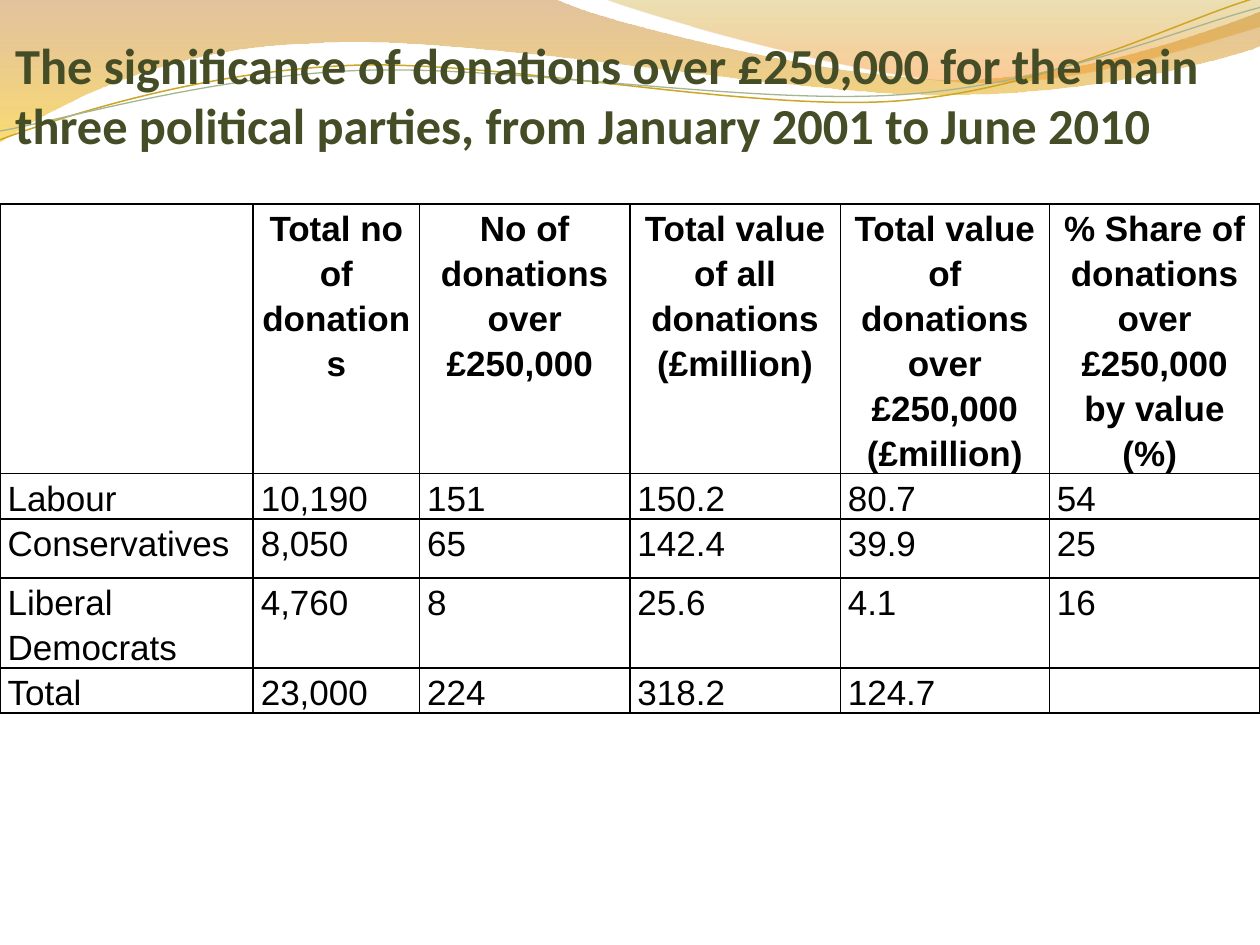
from math import cos, radians, sin

from pptx import Presentation
from pptx.dml.color import RGBColor
from pptx.enum import text
from pptx.oxml import parse_xml
from pptx.oxml.ns import nsdecls, qn
from pptx.util import Inches, Pt

TITLE = ("The significance of donations over £250,000 for the main "
         "three political parties, from January 2001 to June 2010")
ROWS = [
    ["", "Total no of donations", "No of donations over £250,000 ",
     "Total value of all donations (£million)",
     "Total value of donations over £250,000 (£million)",
     "% Share of donations over £250,000 by value (%) "],
    ["Labour", "10,190", "151", "150.2", "80.7", "54"],
    ["Conservatives", "8,050", "65", "142.4", "39.9", "25"],
    ["Liberal Democrats", "4,760", "8", "25.6", "4.1", "16"],
    ["Total", "23,000", "224", "318.2", "124.7", ""],
]
WIDTHS = [2.01, 1.32, 1.67, 1.67, 1.66, 1.67]
HEIGHTS = [1.49, 0.36, 0.47, 0.71, 0.36]

# Outlines in inches: one point is a straight step, three a Bezier curve.
BANDS = [
    ([[(0, 0)], [(4.4, -0.01)],
      [(4.76, 0.17), (6.64, 0.63), (7.58, 0.63)],
      [(8.53, 0.63), (9.58, 0.26), (10, 0.09)], [(10.01, 0.36)],
      [(9.83, 0.44), (8.7, 0.76), (7.46, 0.75)],
      [(6.22, 0.75), (3.82, 0.28), (2.57, 0.34)],
      [(1.29, 0.36), (0.46, 0.83), (-0.01, 1.13)], [(0, 0)]],
     [(0, "C07A28", 45), (1, "F7BF00", 55)]),
    ([[(4.79, -0.01)],
      [(5.09, 0.11), (6.82, 0.62), (7.69, 0.65)],
      [(8.56, 0.69), (9.61, 0.32), (10, 0.21)], [(10, 0)], [(4.79, -0.01)]],
     [(0, "C09709", 30), (0.8, "F59320", 45)]),
]
TILT = -2.7
WAVES = [
    ([[(0, 1.11)],
      [(0.48, 0.93), (1.58, 0.57), (2.77, 0.52)],
      [(3.95, 0.47), (5.93, 0.89), (7.13, 0.8)],
      [(8.33, 0.71), (9.38, 0.15), (9.98, -0.02)]],
     (4.99, 0.575), "CCA624", 0.85),
    ([[(0, 1.04)],
      [(0.47, 0.96), (1.64, 0.61), (2.83, 0.56)],
      [(4.03, 0.51), (5.97, 0.84), (7.17, 0.75)],
      [(8.36, 0.67), (9.41, 0.21), (10, 0.06)]],
     (4.995, 0.59), "A5B592", 0.75),
]


def rgb(code):
    return RGBColor.from_string(code)


def turn(point, mid, angle):
    x, y = point[0] - mid[0], point[1] - mid[1]
    c, s = cos(radians(angle)), sin(radians(angle))
    return mid[0] + c * x - s * y, mid[1] + s * x + c * y


def outline(slide, steps, close):
    """Build a freeform, joining each three-point step into a true curve."""
    points = [(x * 1000, y * 1000) for step in steps for x, y in step]
    pen = slide.shapes.build_freeform(*points[0], scale=Inches(1) / 1000)
    pen.add_line_segments(points[1:], close=close)
    shape = pen.convert_to_shape()
    shape.shadow.inherit = False
    nodes = iter(list(shape._element.iter(qn("a:lnTo"))))
    for step in steps[1:]:
        lines = [next(nodes) for _ in step]
        if len(step) == 3:
            curve = parse_xml(f'<a:cubicBezTo {nsdecls("a")}/>')
            lines[0].addprevious(curve)
            for line in lines:
                curve.append(line[0])
                line.getparent().remove(line)
    return shape


def add_band(slide, steps, stops):
    shape = outline(slide, steps, True)
    shape.line.fill.background()
    shape.fill.gradient()
    shape.fill.gradient_angle = 270
    for stop, (place, code, _) in zip(shape.fill.gradient_stops, stops):
        stop.position = place
        stop.color.rgb = rgb(code)
    for node, (_, _, alpha) in zip(shape._element.iter(qn("a:srgbClr")), stops):
        node.append(parse_xml(f'<a:alpha {nsdecls("a")} val="{alpha * 1000}"/>'))


def add_wave(slide, steps, mid, code, width):
    level = [[turn(point, mid, -TILT) for point in step] for step in steps]
    shape = outline(slide, level, False)
    shape.rotation = TILT
    shape.fill.background()
    shape.line.color.rgb = rgb(code)
    shape.line.width = Pt(width)


def style(para, font, size, code, bold):
    for run in para.runs:
        run.font.name, run.font.size, run.font.bold = font, Pt(size), bold
        run.font.color.rgb = rgb(code)


def set_title(slide):
    title = slide.shapes.title
    title.left, title.top = Inches(0.12), Inches(0)
    title.width, title.height = Inches(9.88), Inches(1.23)
    frame = title.text_frame
    frame.text = TITLE
    frame.word_wrap = True
    frame.auto_size = text.MSO_AUTO_SIZE.NONE
    frame.vertical_anchor = text.MSO_ANCHOR.BOTTOM
    frame.margin_left = frame.margin_right = frame.margin_bottom = 0
    para = frame.paragraphs[0]
    para.alignment = text.PP_ALIGN.LEFT
    style(para, "Calibri", 28.8, "444D26", True)
    slide.shapes._spTree.append(title._element)  # bring in front of the waves


def set_cell(cell, words, head):
    cell.text = words
    cell.margin_left = cell.margin_right = Inches(0.06)
    cell.margin_top = cell.margin_bottom = 0
    para = cell.text_frame.paragraphs[0]
    para.line_spacing = 1.15
    para.alignment = text.PP_ALIGN.CENTER if head else text.PP_ALIGN.LEFT
    style(para, "Arial", 20, "000000", head)
    props = cell._tc.get_or_add_tcPr()
    for side in "LRTB":
        props.append(parse_xml(
            f'<a:ln{side} {nsdecls("a")} w="{Pt(1)}"><a:solidFill>'
            f'<a:srgbClr val="000000"/></a:solidFill></a:ln{side}>'))
    cell.fill.background()


def add_grid(slide):
    table = slide.shapes.add_table(
        len(ROWS), len(WIDTHS), Inches(0), Inches(1.62),
        Inches(sum(WIDTHS)), Inches(sum(HEIGHTS))).table
    table.first_row = table.horz_banding = False
    for col, width in zip(table.columns, WIDTHS):
        col.width = Inches(width)
    for r, (row, height) in enumerate(zip(ROWS, HEIGHTS)):
        table.rows[r].height = Inches(height)
        for c, words in enumerate(row):
            set_cell(table.cell(r, c), words, r == 0)


def main():
    deck = Presentation()
    deck.slide_width, deck.slide_height = Inches(10), Inches(7.5)
    slide = deck.slides.add_slide(deck.slide_layouts[5])
    for band in BANDS:
        add_band(slide, *band)
    for wave in WAVES:
        add_wave(slide, *wave)
    set_title(slide)
    add_grid(slide)
    deck.save("out.pptx")


if __name__ == "__main__":
    main()
